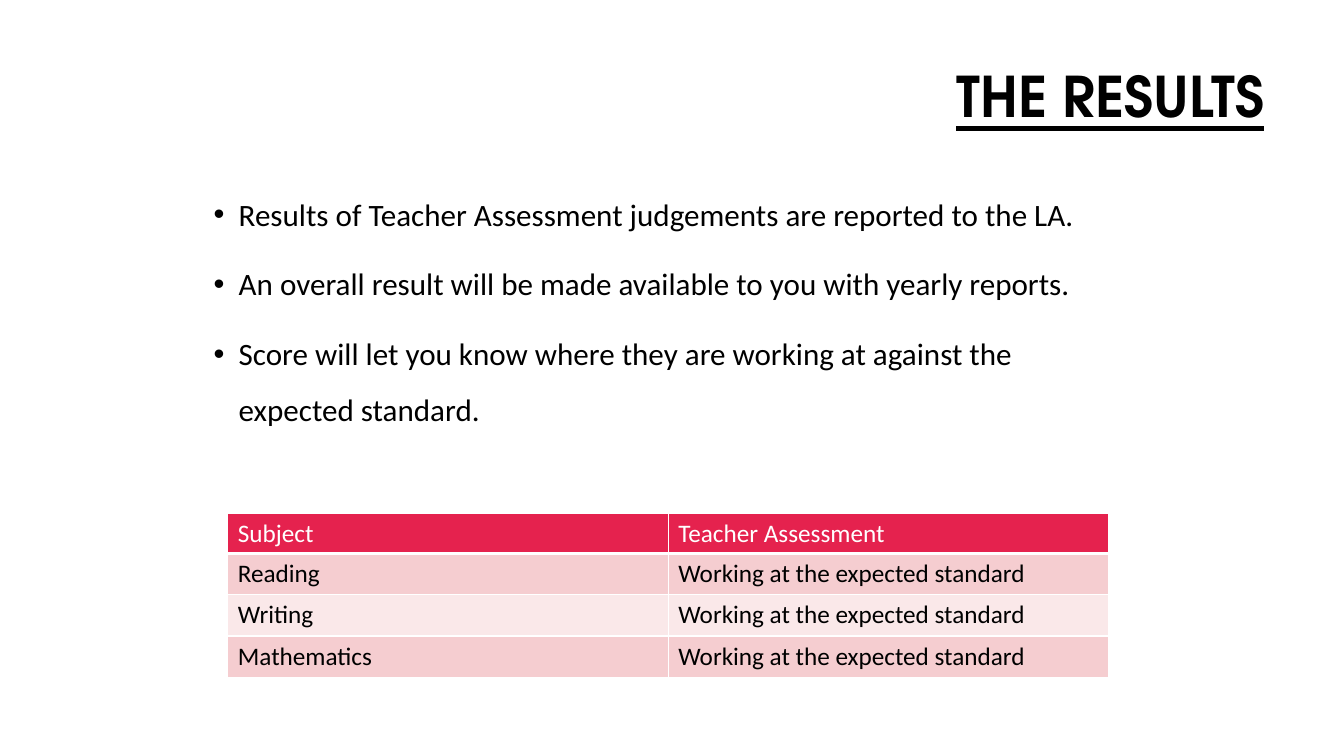
from lxml.etree import SubElement
from pptx import Presentation
from pptx.dml.color import RGBColor
from pptx.enum.text import MSO_ANCHOR, PP_ALIGN
from pptx.oxml.ns import qn
from pptx.util import Inches, Pt

COLORS = {"ink": "000000", "paper": "FFFFFF", "head": "E5224E",
          "odd": "F5CDD0", "even": "FAE8E9"}
POINTS = [
    "Results of Teacher Assessment judgements are reported to the LA.",
    "An overall result will be made available to you with yearly reports.",
    "Score will let you know where they are working at against the expected standard.",
]
GRADE = "Working at the expected standard"
ROWS = [("Subject", "Teacher Assessment")] + [
    (name, GRADE) for name in ("Reading", "Writing", "Mathematics")]


def color(name):
    return RGBColor.from_string(COLORS[name])


def write(para, text, size=18, font="Calibri", ink="ink", bold=False, line=False):
    run = para.add_run()
    run.text = text
    style = run.font
    style.size, style.name = Pt(size), font
    style.bold, style.underline = bold, line
    style.color.rgb = color(ink)


class Page:
    """Slide on a grid of 40 columns and 30 rows."""

    def __init__(self, deck):
        self.slide = deck.slides.add_slide(deck.slide_layouts[6])
        self.col = deck.slide_width / 40
        self.row = deck.slide_height / 30

    def place(self, x, y, w, h):
        return (round(x * self.col), round(y * self.row),
                round(w * self.col), round(h * self.row))

    def box(self, *area):
        frame = self.slide.shapes.add_textbox(*self.place(*area))
        frame.text_frame.word_wrap = True
        return frame

    def title(self, text, *area):
        frame = self.box(*area).text_frame
        frame.vertical_anchor = MSO_ANCHOR.MIDDLE
        para = frame.paragraphs[0]
        para.alignment, para.line_spacing = PP_ALIGN.RIGHT, 0.9
        write(para, text, size=40, font="TeX Gyre Adventor", bold=True, line=True)

    def bullets(self, items, *area):
        shape = self.box(*area)
        shape.fill.solid()
        shape.fill.fore_color.rgb = color("paper")
        frame = shape.text_frame
        for i, text in enumerate(items):
            para = frame.add_paragraph() if i else frame.paragraphs[0]
            para.line_spacing = 1.5
            para.space_before = Pt(10 if i else 0)
            props = para._p.get_or_add_pPr()
            props.set("marL", str(Inches(0.25)))
            props.set("indent", str(-Inches(0.25)))
            SubElement(props, qn("a:buFont"), typeface="Arial")
            SubElement(props, qn("a:buChar"), char="•")
            write(para, text, size=22.2)

    def edge(self, cell, base):
        """Draw white borders, with the bottom one base points wide."""
        props = cell._tc.get_or_add_tcPr()
        for side, width in zip("LRTB", (1, 1, 1, base)):
            line = SubElement(props, qn("a:ln" + side), w=str(Pt(width)))
            fill = SubElement(line, qn("a:solidFill"))
            SubElement(fill, qn("a:srgbClr"), val=COLORS["paper"])

    def table(self, rows, *area):
        shape = self.slide.shapes.add_table(len(rows), len(rows[0]), *self.place(*area))
        grid = shape.table
        for r, texts in enumerate(rows):
            grid.rows[r].height = round(self.row * (1.64 if r else 1.6))
            shade = ("odd" if r % 2 else "even") if r else "head"
            for c, text in enumerate(texts):
                cell = grid.cell(r, c)
                self.edge(cell, 1 if r else 3)
                cell.fill.solid()
                cell.fill.fore_color.rgb = color(shade)
                write(cell.text_frame.paragraphs[0], text, ink="ink" if r else "paper")


def main():
    deck = Presentation()
    deck.slide_width, deck.slide_height = Inches(13.33), Inches(7.5)
    page = Page(deck)
    page.title("THE RESULTS", 6.3, 1.44, 31.62, 5)
    page.bullets(POINTS, 6.06, 6.8, 27, 12.92)
    page.table(ROWS, 6.78, 20.36, 26.22, 6.52)
    deck.save("out.pptx")


if __name__ == "__main__":
    main()
